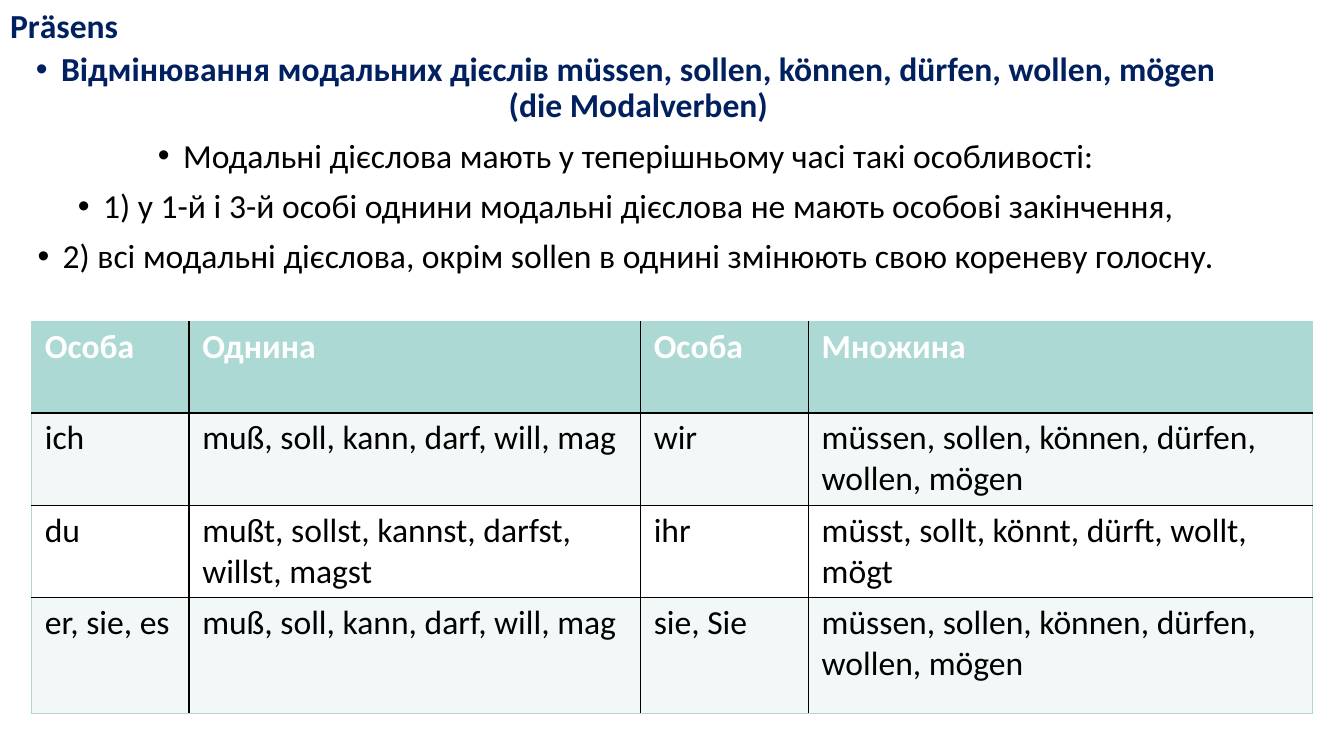
"""Build a slide on the present tense of German modal verbs."""
from dataclasses import dataclass

from lxml.etree import SubElement
from pptx import Presentation
from pptx.dml.color import RGBColor
from pptx.enum.text import MSO_ANCHOR, MSO_AUTO_SIZE, PP_ALIGN
from pptx.oxml.ns import qn
from pptx.util import Pt


@dataclass(frozen=True)
class Theme:
    """Colours and type of the slide."""
    font: str = "Calibri"
    size: int = 24
    heading: str = "002060"
    text: str = "000000"
    white: str = "FFFFFF"
    teal: str = "ADD9D4"
    pale: str = "F1F8F7"


THEME = Theme()
TENSE = "Prӓsens"
RULES = (
    "Відмінювання модальних дієслів müssen, sollen, können, dürfen, wollen, mögen (die Modalverben)",
    "Модальні дієслова мають у теперішньому часі такі особливості:",
    "1) у 1-й і 3-й особі однини модальні дієслова не мають особові закінчення,",
    "2) всі модальні дієслова, окрім sollen в однині змінюють свою кореневу голосну.",
)
CONJUGATION = (
    ("Особа", "Однина", "Особа", "Множина"),
    ("ich", "muß, soll, kann, darf, will, mag", "wir",
     "müssen, sollen, können, dürfen, wollen, mögen"),
    ("du", "mußt, sollst, kannst, darfst, willst, magst", "ihr",
     "müsst, sollt, könnt, dürft, wollt, mögt"),
    ("er, sie, es", "muß, soll, kann, darf, will, mag", "sie, Sie",
     "müssen, sollen, können, dürfen, wollen, mögen"),
)
COLUMN_WIDTHS = (112.5, 322.5, 120, 360)
ROW_HEIGHTS = (65, 65, 65, 83)


def apply(target, values):
    """Set each named attribute on the target."""
    for attribute, value in values.items():
        setattr(target, attribute, value)


def style_font(font, color, bold=False):
    """Give a font the slide's typeface and size."""
    apply(font, {"name": THEME.font, "size": Pt(THEME.size), "bold": bold})
    font.color.rgb = RGBColor.from_string(color)


def place(holder, left, top, width, height):
    """Move a placeholder and let its text run from the top."""
    apply(holder, {"left": Pt(left), "top": Pt(top),
                   "width": Pt(width), "height": Pt(height)})
    apply(holder.text_frame, {"word_wrap": True, "auto_size": MSO_AUTO_SIZE.NONE,
                              "vertical_anchor": MSO_ANCHOR.TOP})


def add_bullet(paragraph):
    """Give a paragraph a round bullet with a hanging indent."""
    properties = paragraph._p.get_or_add_pPr()
    properties.set("marL", str(Pt(18)))
    properties.set("indent", str(Pt(-18)))
    SubElement(properties, qn("a:buFont"), typeface="Arial")
    SubElement(properties, qn("a:buChar"), char="•")


def write_tense(title):
    """Write the tense in the top left corner."""
    place(title, 0, 0, 135, 36)
    title.text_frame.text = TENSE
    heading = title.text_frame.paragraphs[0]
    heading.alignment = PP_ALIGN.LEFT
    style_font(heading.font, THEME.heading, bold=True)


def write_rules(body):
    """List the conjugation rules under their bold heading."""
    place(body, 15, 34, 864, 191.5)
    body.text_frame.text = "\n".join(RULES)
    for index, rule in enumerate(body.text_frame.paragraphs):
        first = index == 0
        add_bullet(rule)
        apply(rule, {"alignment": PP_ALIGN.CENTER, "line_spacing": 0.9,
                     "space_before": Pt(0 if first else 10)})
        style_font(rule.font, THEME.heading if first else THEME.text, first)


def add_borders(cell, colors):
    """Draw the cell's sides in the given colours."""
    properties = cell._tc.get_or_add_tcPr()
    for side, color in colors.items():
        line = SubElement(properties, qn(f"a:ln{side}"), w=str(Pt(1)))
        fill = SubElement(line, qn("a:solidFill"))
        SubElement(fill, qn("a:srgbClr"), val=color)


def fill_cell(cell, text, row, column):
    """Write and format one cell of the conjugation table."""
    header = row == 0
    edges = {"L": column == 0, "R": column == len(COLUMN_WIDTHS) - 1,
             "T": header, "B": row == len(ROW_HEIGHTS) - 1}
    add_borders(cell, {side: THEME.teal if outer else THEME.text
                       for side, outer in edges.items()})
    background = THEME.teal if header else THEME.pale if row % 2 else THEME.white
    cell.fill.solid()
    cell.fill.fore_color.rgb = RGBColor.from_string(background)
    apply(cell, {"text": text, "margin_left": Pt(9.5), "margin_right": Pt(9.5),
                 "margin_top": Pt(3.6), "margin_bottom": Pt(3.6)})
    style_font(cell.text_frame.paragraphs[0].runs[0].font,
               THEME.white if header else THEME.text, header)


def add_conjugation(slide):
    """Add the table of verb forms by person and number."""
    table = slide.shapes.add_table(
        len(ROW_HEIGHTS), len(COLUMN_WIDTHS), Pt(22.5), Pt(230),
        Pt(sum(COLUMN_WIDTHS)), Pt(sum(ROW_HEIGHTS))).table
    for column, width in zip(table.columns, COLUMN_WIDTHS):
        column.width = Pt(width)
    for row, height in zip(table.rows, ROW_HEIGHTS):
        row.height = Pt(height)
    for row, forms in enumerate(CONJUGATION):
        for column, text in enumerate(forms):
            fill_cell(table.cell(row, column), text, row, column)


def main():
    """Build and save the presentation."""
    deck = Presentation()
    apply(deck, {"slide_width": Pt(960), "slide_height": Pt(540)})
    slide = deck.slides.add_slide(deck.slide_layouts[1])
    write_rules(slide.placeholders[1])
    write_tense(slide.shapes.title)
    add_conjugation(slide)
    deck.save("out.pptx")


if __name__ == "__main__":
    main()
